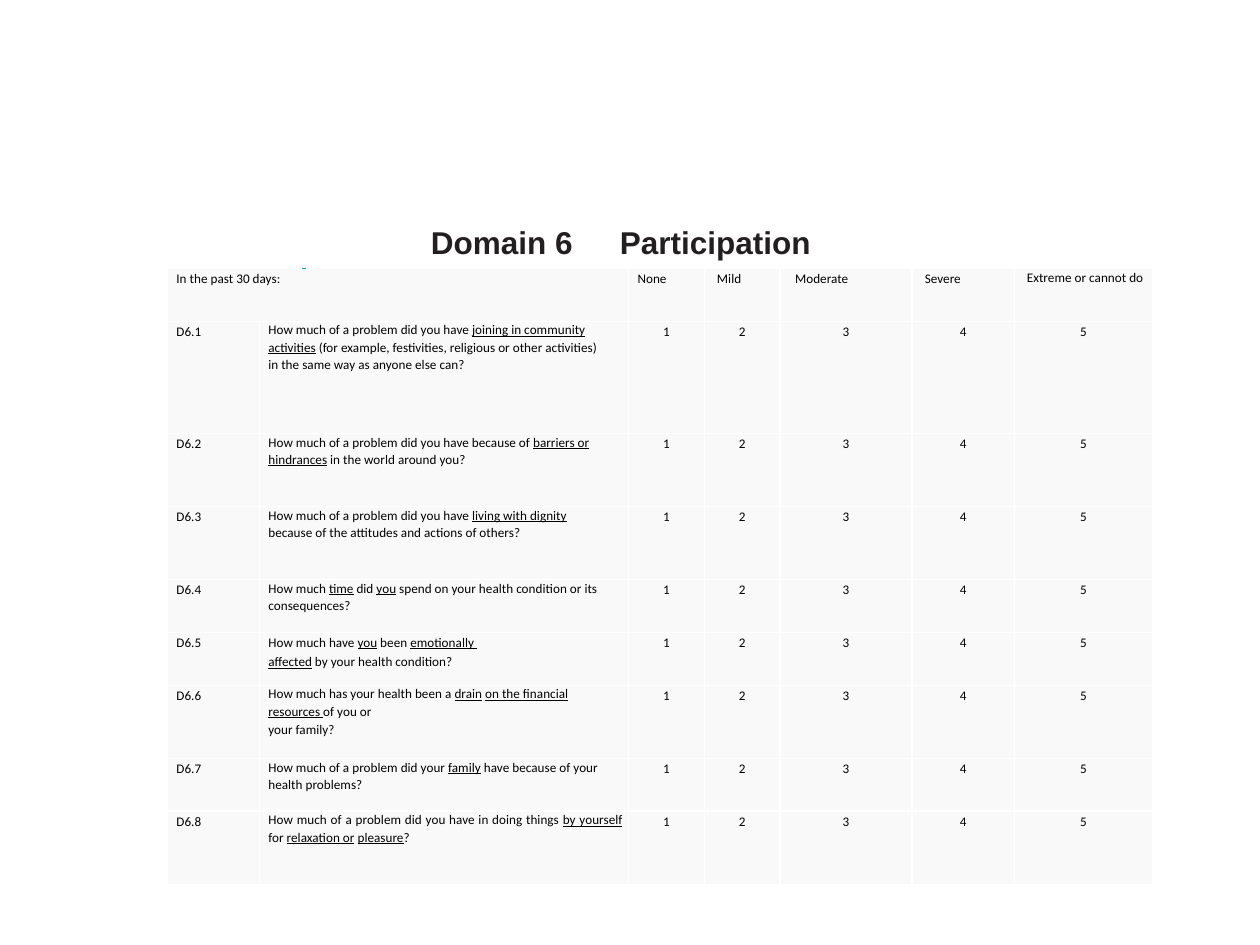
"""Build the Domain 6 participation questionnaire slide."""
from dataclasses import dataclass
from lxml.etree import SubElement
from pptx import Presentation
from pptx.dml.color import RGBColor
from pptx.enum.shapes import MSO_CONNECTOR as Connector
from pptx.enum.text import MSO_ANCHOR as Anchor, PP_ALIGN as Align
from pptx.oxml.ns import qn
from pptx.slide import Slide
from pptx.util import Inches, Pt

BLACK = RGBColor(0x00, 0x00, 0x00)
CHARCOAL = RGBColor(0x23, 0x1F, 0x20)
PALE_GREY = RGBColor(0xF9, 0xF9, 0xF9)
WHITE = RGBColor(0xFF, 0xFF, 0xFF)
CYAN = RGBColor(0x00, 0xAE, 0xEF)

COLUMN_WIDTHS = [0.73, 2.93, 0.6, 0.6, 1.05, 0.81, 1.1]
ROW_HEIGHTS = [0.42, 0.89, 0.58, 0.58, 0.42, 0.42, 0.58, 0.42, 0.58]
RATINGS = [("None", 0.07), ("Mild", 0.1), ("Moderate", 0.12),
           ("Severe", 0.1), ("Extreme or cannot do", 0.1)]
QUESTIONS = [
    "How much of a problem did you have _joining in community activities_ "
    "(for example, festivities, religious or other activities) "
    "in the same way as anyone else can?",
    "How much of a problem did you have because of _barriers or hindrances_ "
    "in the world around you?",
    "How much of a problem did you have _living with dignity_ "
    "because of the attitudes and actions of others?",
    "How much _time_ did _you_ spend on your health condition or its consequences?",
    "How much have _you_ been _emotionally _\n_affected_ by your health condition?",
    "How much has your health been a _drain_ _on the financial resources _of you or\n"
    "your family?",
    "How much of a problem did your _family_ have because of your health problems?",
    "How much of a problem did you have in doing things _by yourself_ "
    "for _relaxation or_ _pleasure_?",
]


def write_text(frame, text, font="Calibri", size=7.5, color=BLACK, bold=False,
               align=Align.LEFT, indent=0, right=0, spacing=1.15, tab=None):
    """Write paragraphs split at line ends, underlining the words between underscores."""
    for index, line in enumerate(text.split("\n")):
        paragraph = frame.add_paragraph() if index else frame.paragraphs[0]
        properties = paragraph._p.get_or_add_pPr()
        properties.set("marL", str(Inches(indent)))
        properties.set("marR", str(Inches(right)))
        properties.set("indent", "0")
        if tab:
            stops = SubElement(properties, qn("a:tabLst"))
            SubElement(stops, qn("a:tab"), pos=str(Inches(tab)), algn="l")
        paragraph.alignment = align
        paragraph.line_spacing = spacing
        paragraph.space_before = Pt(0.5 if index else 0)
        for part, words in enumerate(line.split("_")):
            if words:
                run = paragraph.add_run()
                run.text = words
                run.font.name, run.font.size = font, Pt(size)
                run.font.bold, run.font.underline = bold, part % 2 == 1
                run.font.color.rgb = color


@dataclass
class SurveySlide:
    """Hold the table style and the slide being built."""
    slide: Slide
    fill: RGBColor = PALE_GREY
    border: RGBColor = WHITE
    border_width: float = 1

    def title(self, text, left, top, width, height, **text_format):
        """Place and format the title placeholder."""
        heading = self.slide.shapes.title
        heading.left, heading.top = Inches(left), Inches(top)
        heading.width, heading.height = Inches(width), Inches(height)
        frame = heading.text_frame
        frame.vertical_anchor = Anchor.MIDDLE
        frame.margin_left, frame.margin_right = Inches(0.1), 0
        write_text(frame, text, **text_format)

    def table(self, left, top, widths, heights):
        """Add a table with plain filled cells and even borders."""
        grid = self.slide.shapes.add_table(
            len(heights), len(widths), Inches(left), Inches(top),
            Inches(sum(widths)), Inches(sum(heights))).table
        grid.first_row = grid.horz_banding = False
        for column, width in zip(grid.columns, widths):
            column.width = Inches(width)
        for row, height in zip(grid.rows, heights):
            row.height = Inches(height)
        for cell in grid.iter_cells():
            self.style_cell(cell)
        return grid

    def style_cell(self, cell):
        """Give a cell its margins, borders and fill."""
        cell.margin_left = cell.margin_right = cell.margin_top = cell.margin_bottom = 0
        properties = cell._tc.get_or_add_tcPr()
        for side in ("lnL", "lnR", "lnT", "lnB"):
            edge = SubElement(properties, qn(f"a:{side}"), w=str(Pt(self.border_width)))
            solid = SubElement(edge, qn("a:solidFill"))
            SubElement(solid, qn("a:srgbClr"), val=str(self.border))
        cell.fill.solid()
        cell.fill.fore_color.rgb = self.fill

    def line(self, start, end, color, width):
        """Draw a straight line without a shadow."""
        rule = self.slide.shapes.add_connector(
            Connector.STRAIGHT, *(Inches(value) for value in (*start, *end)))
        rule.line.color.rgb = color
        rule.line.width = Pt(width)
        SubElement(rule._element.spPr, qn("a:effectLst"))


def main():
    """Build and save the slide."""
    deck = Presentation()
    deck.slide_width, deck.slide_height = Inches(10), Inches(7.5)
    survey = SurveySlide(deck.slides.add_slide(deck.slide_layouts[5]))
    survey.title("Domain 6\tParticipation", 3.32, 1.72, 3.4, 0.4, font="Arial",
                 size=18, color=CHARCOAL, bold=True, spacing=1.0, tab=1.61)

    answers = survey.table(1.33, 2.13, COLUMN_WIDTHS, ROW_HEIGHTS)
    answers.cell(0, 0).merge(answers.cell(0, 1))
    write_text(answers.cell(0, 0).text_frame, "In the past 30 days:", indent=0.07)
    for column, (rating, indent) in enumerate(RATINGS, 2):
        spacing = 1.08 if column == 6 else 1.15
        write_text(answers.cell(0, column).text_frame, rating,
                   indent=indent, spacing=spacing)
    for number, question in enumerate(QUESTIONS, 1):
        last = number == len(QUESTIONS)
        write_text(answers.cell(number, 0).text_frame, f"D6.{number}", indent=0.07)
        write_text(answers.cell(number, 1).text_frame, question, indent=0.07,
                   right=0.05 if last else 0.15,
                   align=Align.JUSTIFY if last else Align.LEFT,
                   spacing=1.15 if number == 5 else 1.07)
        for score in range(1, len(RATINGS) + 1):
            write_text(answers.cell(number, score + 1).text_frame, str(score),
                       align=Align.CENTER)

    survey.line((2.4, 2.13), (2.43, 2.13), CYAN, 0.64)
    deck.save("out.pptx")


if __name__ == "__main__":
    main()
